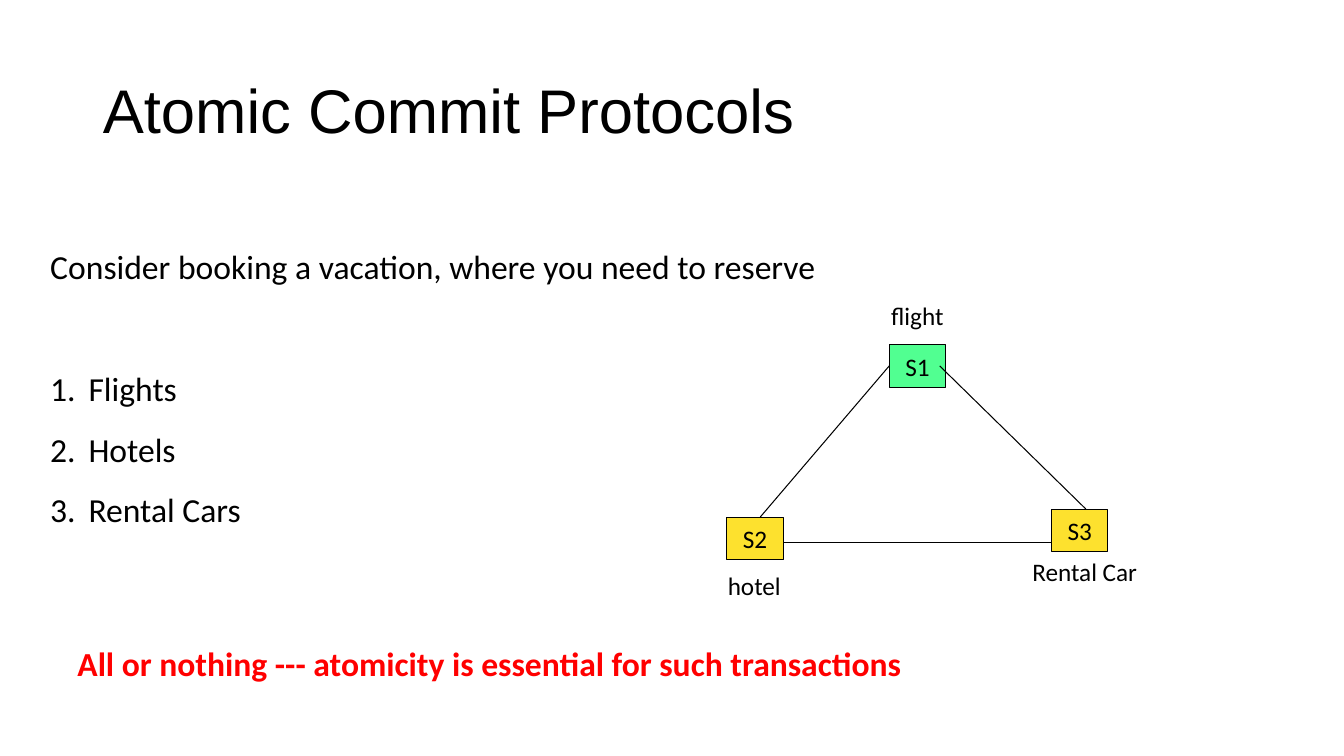
import pptx
import pptx.util
import pptx.dml.color
import pptx.enum.shapes
import pptx.enum.text
import pptx.oxml
import pptx.oxml.ns

Inches = pptx.util.Inches
Pt = pptx.util.Pt
RGBColor = pptx.dml.color.RGBColor
PP_ALIGN = pptx.enum.text.PP_ALIGN
MSO_ANCHOR = pptx.enum.text.MSO_ANCHOR

BLACK = RGBColor(0x00, 0x00, 0x00)
RED = RGBColor(0xFF, 0x00, 0x00)
GREEN = RGBColor(0x51, 0xFF, 0x91)
YELLOW = RGBColor(0xFD, 0xE1, 0x2E)

SITE_WIDTH, SITE_HEIGHT = 0.56, 0.42
LINE_WIDTH = Pt(0.75)


def add_span(para, text, size, color=BLACK, bold=False, font="Calibri"):
    span = para.add_run()
    span.text = text
    span.font.name = font
    span.font.size = Pt(size)
    span.font.bold = bold
    span.font.color.rgb = color


def add_title(page, text):
    title = page.shapes.title
    title.left, title.top = Inches(0.92), Inches(0.4)
    title.width, title.height = Inches(11.5), Inches(1.45)
    title.text_frame.vertical_anchor = MSO_ANCHOR.MIDDLE
    para = title.text_frame.paragraphs[0]
    para.alignment = PP_ALIGN.LEFT
    para.line_spacing = 0.9
    add_span(para, text, 44, font="Arial")


def add_text_box(page, left, top, width, height):
    box = page.shapes.add_textbox(
        Inches(left), Inches(top), Inches(width), Inches(height))
    box.text_frame.word_wrap = False
    return box.text_frame


def add_label(page, text, left, top, width, height=0.4, size=18, **style):
    frame = add_text_box(page, left, top, width, height)
    add_span(frame.paragraphs[0], text, size, **style)


def number_para(para):
    properties = para._p.get_or_add_pPr()
    properties.set("marL", str(Inches(0.38)))
    properties.set("indent", str(Inches(-0.38)))
    numbering = pptx.oxml.parse_xml(
        "<a:buAutoNum %s type='arabicPeriod'/>" % pptx.oxml.ns.nsdecls("a"))
    properties.append(numbering)


def add_reservations(page, lead, items):
    frame = add_text_box(page, 0.4, 2.19, 7.87, 3.07)
    para = frame.paragraphs[0]
    para.line_spacing = 1.5
    add_span(para, lead, 24)
    for index, item in enumerate(items):
        para = frame.add_paragraph()
        para.line_spacing = 1.5
        if index == 0:
            para.space_before = Pt(44)
        number_para(para)
        add_span(para, item, 24)


def add_site(page, name, left, top, color):
    site = page.shapes.add_shape(
        pptx.enum.shapes.MSO_SHAPE.RECTANGLE, Inches(left), Inches(top),
        Inches(SITE_WIDTH), Inches(SITE_HEIGHT))
    site.shadow.inherit = False
    site.fill.solid()
    site.fill.fore_color.rgb = color
    site.line.color.rgb = BLACK
    site.line.width = LINE_WIDTH
    frame = site.text_frame
    frame.word_wrap = False
    frame.vertical_anchor = MSO_ANCHOR.MIDDLE
    para = frame.paragraphs[0]
    para.alignment = PP_ALIGN.CENTER
    add_span(para, name, 18)


def add_link(page, start, end):
    link = page.shapes.add_connector(
        pptx.enum.shapes.MSO_CONNECTOR.STRAIGHT,
        *[Inches(value) for value in start + end])
    link.line.color.rgb = BLACK
    link.line.width = LINE_WIDTH
    link._element.spPr.append(pptx.oxml.parse_xml(
        "<a:effectLst %s/>" % pptx.oxml.ns.nsdecls("a")))


def main():
    deck = pptx.Presentation()
    deck.slide_width, deck.slide_height = Inches(13.33), Inches(7.5)
    page = deck.slides.add_slide(deck.slide_layouts.get_by_name("Title Only"))
    add_title(page, "Atomic Commit Protocols")

    # Sites and the links between them
    add_site(page, "S1", 8.82, 3.42, GREEN)
    add_site(page, "S3", 10.43, 5.05, YELLOW)
    add_site(page, "S2", 7.21, 5.13, YELLOW)
    add_link(page, (7.77, 5.38), (10.43, 5.38))
    add_link(page, (8.82, 3.63), (7.54, 5.13))
    add_link(page, (9.32, 3.63), (10.77, 5.05))

    # Reservation list
    add_reservations(
        page, "Consider booking a vacation, where you need to reserve",
        ["Flights", "Hotels", "Rental Cars"])

    # Site labels
    add_label(page, "flight", 8.74, 2.93, 0.73)
    add_label(page, "hotel", 7.12, 5.61, 0.73)
    add_label(page, "Rental Car", 10.14, 5.47, 1.25)

    # Conclusion
    add_label(
        page, "All or nothing --- atomicity is essential for such transactions",
        0.67, 6.33, 8.46, 0.5, size=24, color=RED, bold=True)

    deck.save("out.pptx")


if __name__ == "__main__":
    main()
